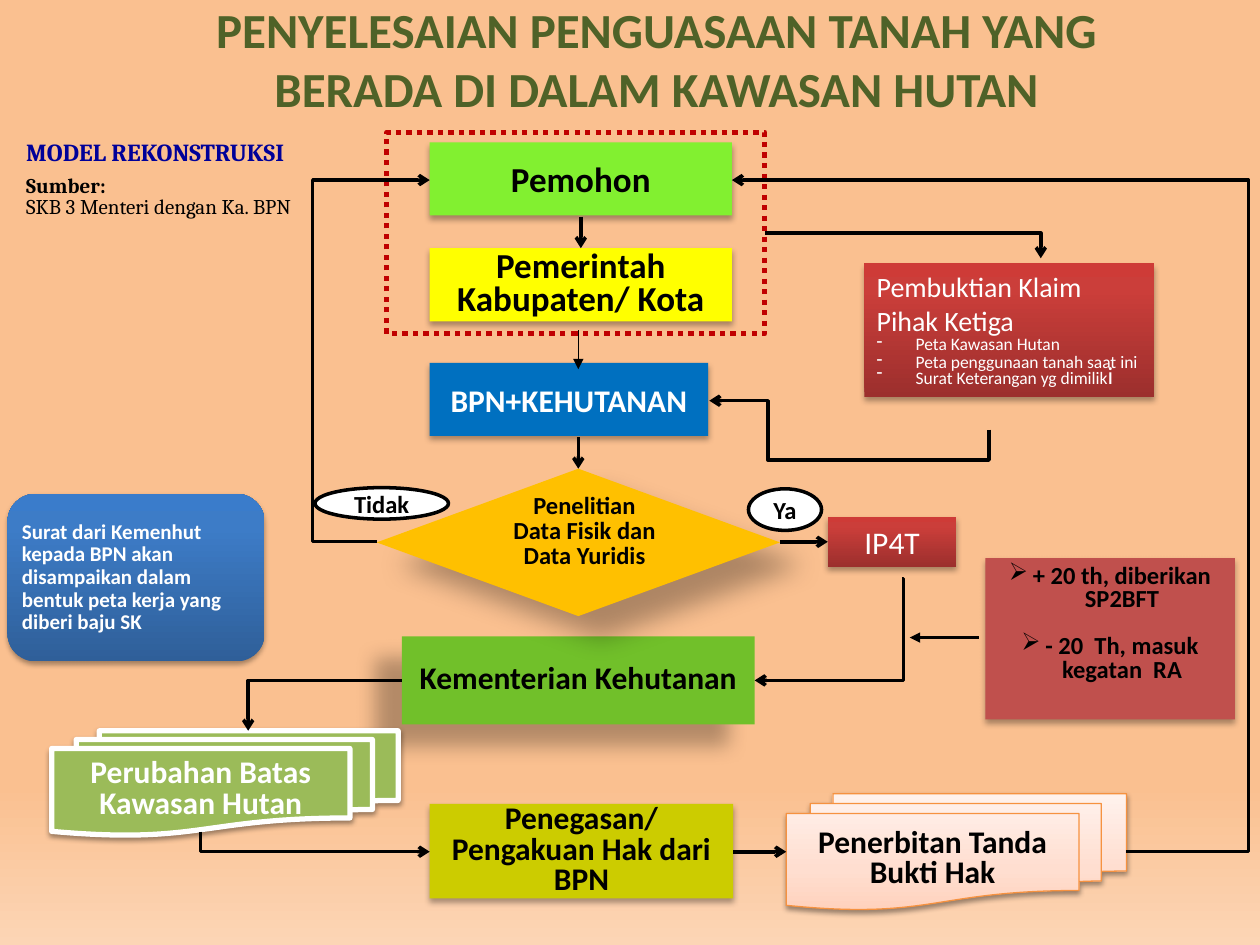
from dataclasses import dataclass

from lxml.etree import SubElement as Sub
from pptx import Presentation
from pptx.dml.color import RGBColor as Rgb
from pptx.enum.dml import MSO_LINE as Dash
from pptx.enum.shapes import MSO_CONNECTOR as Link, MSO_SHAPE as Form
from pptx.enum.text import MSO_ANCHOR as Anchor, PP_ALIGN as Align
from pptx.oxml.ns import qn
from pptx.util import Inches, Pt


@dataclass(frozen=True)
class Theme:
    sans: str = "Calibri"
    serif: str = "Cambria"
    black: str = "000000"
    white: str = "FFFFFF"
    olive: str = "4F6228"
    navy: str = "000099"
    lime: str = "82F030"
    yellow: str = "FFFF00"
    blue: str = "0070C0"
    green: str = "71C02A"
    mustard: str = "CCCC00"
    amber: str = "FFC000"
    leaf: str = "9BBB59"
    brick: str = "C0504D"
    dots: str = "C00000"
    orange: str = "F69240"
    sand: tuple = ((0, "FAC090"), (83, "FAC090"), (100, "FCD5B5"))
    peach: tuple = ((0, "FFD2BD"), (35, "FFDED0"), (100, "FFF2ED"))
    sea: tuple = ((0, "2F5F99"), (80, "3D7CC7"), (100, "3A7CCB"))
    red: tuple = ((0, "9C2F2D"), (80, "CB3E3A"), (100, "CE3B37"))
    head: int = 28
    large: int = 20
    body: int = 18
    lead: int = 16
    mid: int = 14
    note: int = 12
    fine: int = 10
    soft: tuple = (32, 3.5, 2.2, 90)
    sheet: tuple = (38, 3.1, 1.6, 90)


class Board:
    def __init__(self, deck, theme):
        self.theme = theme
        self.slide = deck.slides.add_slide(deck.slide_layouts[5])
        back = self.slide.background.fill
        self.blend(back, self.slide._element, theme.sand, 270)

    def blend(self, fill, node, stops, angle=90):
        fill.gradient()
        fill.gradient_angle = angle
        group = next(node.iter(qn("a:gsLst")))
        for old in list(group):
            group.remove(old)
        for place, color in stops:
            stop = Sub(group, qn("a:gs"), pos=str(place * 1000))
            Sub(stop, qn("a:srgbClr"), val=color)

    def shade(self, shape, shadow):
        shape.shadow.inherit = False
        if not shadow:
            return
        alpha, blur, dist, angle = shadow
        effects = shape._element.spPr.find(qn("a:effectLst"))
        outer = Sub(effects, qn("a:outerShdw"), blurRad=str(Pt(blur)), dist=str(Pt(dist)),
                    dir=str(angle * 60000), algn="ctr", rotWithShape="0")
        color = Sub(outer, qn("a:srgbClr"), val=self.theme.black)
        Sub(color, qn("a:alpha"), val=str(alpha * 1000))

    def letter(self, frame, lines, size, color=None, font=None, bold=True,
               align=Align.CENTER, space=None, anchor=Anchor.MIDDLE, pad=(0.1, 0.05, 0.1, 0.05)):
        frame.word_wrap = True
        frame.vertical_anchor = anchor
        left, top, right, bottom = map(Inches, pad)
        frame.margin_left, frame.margin_top = left, top
        frame.margin_right, frame.margin_bottom = right, bottom
        for rank, line in enumerate(lines):
            para = frame.paragraphs[0] if rank == 0 else frame.add_paragraph()
            para.text = line
            para.alignment = align
            para.line_spacing = space
            para.font.name = font or self.theme.sans
            para.font.size = Pt(size)
            para.font.bold = bold
            para.font.color.rgb = Rgb.from_string(color or self.theme.black)
        return frame.paragraphs

    def title(self, place, line):
        head = self.slide.shapes.title
        head.left, head.top, head.width, head.height = map(Inches, place)
        self.letter(head.text_frame, [line], self.theme.head, self.theme.olive)

    def label(self, place, lines, size, **style):
        text = self.slide.shapes.add_textbox(*map(Inches, place))
        return self.letter(text.text_frame, lines, size, font=self.theme.serif,
                           align=Align.LEFT, anchor=Anchor.TOP, **style)

    def box(self, place, fill=None, lines=(), size=18, form=Form.RECTANGLE,
            edge=None, width=2, dash=None, shadow=None, **style):
        shape = self.slide.shapes.add_shape(form, *map(Inches, place))
        if fill is None:
            shape.fill.background()
        elif isinstance(fill, tuple):
            self.blend(shape.fill, shape._element, fill)
        else:
            shape.fill.solid()
            shape.fill.fore_color.rgb = Rgb.from_string(fill)
        if edge:
            shape.line.color.rgb = Rgb.from_string(edge)
            shape.line.width = Pt(width)
            shape.line.dash_style = dash
        else:
            shape.line.fill.background()
        self.shade(shape, shadow)
        return self.letter(shape.text_frame, lines, size, **style)

    def bullet(self, para, mark, indent):
        props = para._p.get_or_add_pPr()
        props.set("marL", str(Inches(indent)))
        props.set("indent", str(-Inches(indent)))
        sign = props.makeelement(qn("a:buChar"), {"char": mark})
        props.insert_element_before(sign, "a:tabLst", "a:defRPr", "a:extLst")

    def arrow(self, start, end, bends=0, turn=0, adjust=(), width=2, tip="arrow"):
        mid = [(a + b) / 2 for a, b in zip(start, end)]
        cos, sin = {0: (1, 0), 90: (0, 1), 270: (0, -1)}[turn]
        spots = []
        for x, y in (start, end):
            dx, dy = x - mid[0], y - mid[1]
            spots += [mid[0] + dx * cos + dy * sin, mid[1] + dy * cos - dx * sin]
        kind = Link.ELBOW if bends else Link.STRAIGHT
        line = self.slide.shapes.add_connector(kind, *map(Inches, spots))
        line.line.color.rgb = Rgb.from_string(self.theme.black)
        line.line.width = Pt(width)
        props = line._element.spPr
        Sub(props.find(qn("a:ln")), qn("a:tailEnd"), type=tip)
        Sub(props, qn("a:effectLst"))
        if turn:
            props.find(qn("a:xfrm")).set("rot", str(turn * 60000))
        if bends:
            shape = props.find(qn("a:prstGeom"))
            shape.set("prst", f"bentConnector{bends + 1}")
            guides = shape.find(qn("a:avLst"))
            for rank, value in enumerate(adjust, 1):
                Sub(guides, qn("a:gd"), name=f"adj{rank}", fmla=f"val {round(value * 100000)}")


def main():
    deck = Presentation()
    deck.slide_width, deck.slide_height = Inches(10), Inches(7.5)
    t = Theme()
    b = Board(deck, t)
    b.title((1, -0.03, 8.42, 0.99), "PENYELESAIAN PENGUASAAN TANAH YANG BERADA DI DALAM KAWASAN HUTAN")

    left = 3.41
    for place, fill, lines, size, color, space, shadow in (
        ((left, 1.13, 2.4, 0.58), t.lime, ["Pemohon"], t.large, t.black, None, t.soft),
        ((left, 1.97, 2.4, 0.58), t.yellow, ["Pemerintah", "Kabupaten/ Kota"], t.large, t.black, 0.8, t.soft),
        ((left, 2.88, 2.21, 0.58), t.blue, ["BPN+KEHUTANAN"], t.body, t.white, None, t.soft),
        ((3.19, 5.05, 2.8, 0.7), t.green, ["Kementerian Kehutanan"], t.body, t.black, 0.8, (28, 11.8, 19.7, 141)),
        ((left, 6.38, 2.41, 0.75), t.mustard, ["Penegasan/ Pengakuan Hak dari BPN"], t.body, t.black, 0.8, t.soft),
    ):
        b.box(place, fill, lines, size, color=color, space=space, shadow=shadow)
    b.box((3.07, 1.05, 3, 1.6), edge=t.dots, width=3, dash=Dash.ROUND_DOT)
    b.box((2.99, 3.72, 3.2, 1.17), t.amber, ["Penelitian", "Data Fisik dan Data Yuridis"], t.mid,
          form=Form.DIAMOND, space=0.85, shadow=(30, 15, 18, 45), pad=(0.1, 0.05, 0, 0.22))
    for place, fill, line, color, edge, width in (
        ((6.24, 6.3, 2.7, 0.92), t.peach, "Penerbitan Tanda Bukti Hak", t.black, t.orange, 0.75),
        ((0.41, 5.8, 2.75, 0.83), t.leaf, "Perubahan Batas Kawasan Hutan", t.white, t.white, 3),
    ):
        b.box(place, fill, [line], t.body, form=Form.FLOWCHART_MULTIDOCUMENT, edge=edge,
              width=width, shadow=t.sheet, color=color, space=0.8)

    b.arrow((4.61, 1.72), (4.61, 1.97))
    b.arrow((4.59, 2.62), (4.59, 2.93), width=0.75, tip="triangle")
    b.arrow((4.59, 3.47), (4.59, 3.72))
    b.arrow((6.19, 4.3), (6.57, 4.3))
    b.arrow((5.82, 6.76), (6.24, 6.76))
    b.arrow((7.77, 5.06), (7.22, 5.06), tip="triangle")
    b.arrow((2.99, 4.3), (3.41, 1.43), 2, adjust=[-1.21])
    b.arrow((7.16, 4.59), (5.99, 5.4), 2, adjust=[-0.01])
    b.arrow((8.94, 6.76), (5.81, 1.43), 2, adjust=[-0.31])
    b.arrow((6.07, 1.85), (8.26, 2.05), 1)
    b.arrow((3.19, 5.4), (1.97, 5.8), 1)
    b.arrow((1.59, 6.6), (3.41, 6.76), 1, 270)
    b.arrow((7.85, 3.41), (5.63, 3.18), 3, 90, [-1.05, 0.79])

    source = b.label((0.11, 1.35, 2.31, 0.62), ["Sumber:", "SKB 3 Menteri dengan Ka. BPN"], t.note, space=0.85)
    source[1].font.bold = False
    b.label((0.11, 1.04, 2.81, 0.34), ["MODEL REKONSTRUKSI"], t.mid, color=t.navy)
    b.box((0.06, 3.92, 2.04, 1.33), t.sea,
          ["Surat dari Kemenhut kepada BPN akan disampaikan dalam bentuk peta kerja yang diberi baju SK"],
          t.note, form=Form.ROUNDED_RECTANGLE, shadow=(35, 3.1, 1.8, 90), color=t.white,
          align=Align.LEFT, space=0.9, pad=(0.05, 0.05, 0.05, 0.05))
    for place, line in (((5.94, 3.88, 0.58, 0.33), "Ya"), ((2.5, 3.87, 1.06, 0.25), "Tidak")):
        b.box(place, t.white, [line], t.mid, form=Form.OVAL, edge=t.black)

    proof = b.box((6.86, 2.09, 2.3, 1.06), t.red,
                  ["Pembuktian Klaim", "Pihak Ketiga", "Peta Kawasan Hutan",
                   "Peta penggunaan tanah saat ini", "Surat Keterangan yg dimilik"],
                  t.lead, shadow=t.soft, color=t.white, bold=False, align=Align.LEFT, anchor=Anchor.TOP)
    for para in proof[2:]:
        para.font.size = para.line_spacing = Pt(t.fine)
        b.bullet(para, "-", 0.31)
    tail = proof[-1].add_run()
    tail.text = "i"
    tail.font.size = Pt(t.mid)
    b.box((6.57, 4.1, 1.02, 0.4), t.red, ["IP4T"], t.body, shadow=t.soft,
          color=t.white, bold=False, anchor=Anchor.TOP)
    terms = b.box((7.82, 4.43, 1.98, 1.28), t.brick, ["+ 20 th, diberikan SP2BFT", "- 20  Th, masuk kegatan  RA"],
                  t.mid, shadow=t.soft, space=0.8, pad=(0.1, 0.05, 0.1, 0.28))
    terms[0].space_after = Pt(13.5)
    for para in terms:
        b.bullet(para, "➢", 0.19)
    deck.save("out.pptx")


if __name__ == "__main__":
    main()
